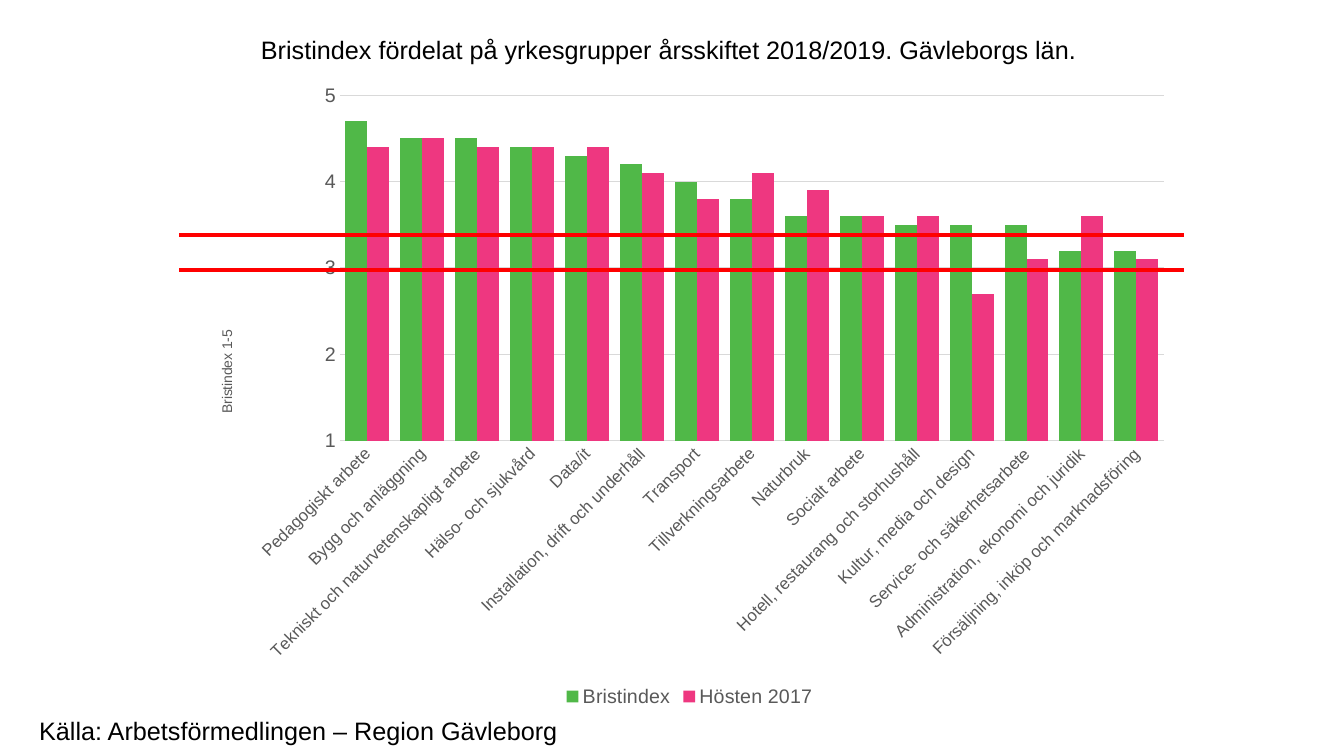
from dataclasses import dataclass
from pptx import Presentation
from pptx.chart.data import CategoryChartData
from pptx.dml.color import RGBColor
from pptx.enum.chart import XL_CHART_TYPE, XL_LEGEND_POSITION, XL_TICK_MARK
from pptx.enum.shapes import MSO_CONNECTOR
from pptx.enum.text import MSO_AUTO_SIZE
from pptx.oxml import parse_xml
from pptx.oxml.ns import nsdecls, qn
from pptx.oxml.xmlchemy import OxmlElement
from pptx.util import Pt

SCALE = 9144


@dataclass(frozen=True)
class Theme:
    face: str = "Arial"
    ink: str = "000000"
    gray: str = "595959"
    grid: str = "D9D9D9"
    mark: str = "FF0000"
    bars: tuple = ("50B848", "EE3780")
    head: int = 18
    tick: int = 14
    name: int = 12
    note: int = 10
    thin: float = 0.75
    bold: float = 3


GROUPS = [
    ("Pedagogiskt arbete", 4.7, 4.4),
    ("Bygg och anläggning", 4.5, 4.5),
    ("Tekniskt och naturvetenskapligt arbete", 4.5, 4.4),
    ("Hälso- och sjukvård", 4.4, 4.4),
    ("Data/it", 4.3, 4.4),
    ("Installation, drift och underhåll", 4.2, 4.1),
    ("Transport", 4.0, 3.8),
    ("Tillverkningsarbete", 3.8, 4.1),
    ("Naturbruk", 3.6, 3.9),
    ("Socialt arbete", 3.6, 3.6),
    ("Hotell, restaurang och storhushåll", 3.5, 3.6),
    ("Kultur, media och design", 3.5, 2.7),
    ("Service- och säkerhetsarbete", 3.5, 3.1),
    ("Administration, ekonomi och juridik", 3.2, 3.6),
    ("Försäljning, inköp och marknadsföring", 3.2, 3.1),
]


class Page:
    def __init__(self, deck, theme):
        self.theme = theme
        self.slide = deck.slides.add_slide(deck.slide_layouts[6])

    def px(self, *sizes):
        return [size * SCALE for size in sizes]

    def font(self, font, size, color):
        font.name = self.theme.face
        font.size = Pt(size)
        font.bold = False
        font.color.rgb = RGBColor.from_string(color)

    def stroke(self, line, color, width):
        line.color.rgb = RGBColor.from_string(color)
        line.width = Pt(width)

    def text(self, words, *box):
        frame = self.slide.shapes.add_textbox(*self.px(*box)).text_frame
        frame.word_wrap = False
        frame.auto_size = MSO_AUTO_SIZE.SHAPE_TO_FIT_TEXT
        run = frame.paragraphs[0].add_run()
        run.text = words
        self.font(run.font, self.theme.head, self.theme.ink)

    def line(self, left, right, top):
        ends = self.px(left, top, right, top)
        rule = self.slide.shapes.add_connector(MSO_CONNECTOR.STRAIGHT, *ends)
        self.stroke(rule.line, self.theme.mark, self.theme.bold)
        rule._element.spPr.append(OxmlElement("a:effectLst"))

    def turn(self, node, angle):
        for body in node.iter(qn("a:bodyPr")):
            body.set("rot", str(angle * 60000))
            body.set("vert", "horz")

    def place(self, node, index, **parts):
        for old in node.findall(qn("c:layout")):
            node.remove(old)
        tags = "".join(f'<c:{key} val="{val}"/>' for key, val in parts.items())
        node.insert(index, parse_xml(
            f'<c:layout {nsdecls("c")}><c:manualLayout>{tags}'
            "</c:manualLayout></c:layout>"))

    def axis(self, axis, size):
        axis.major_tick_mark = axis.minor_tick_mark = XL_TICK_MARK.NONE
        self.font(axis.tick_labels.font, size, self.theme.gray)

    def chart(self, groups, names, label, *box):
        theme = self.theme
        data = CategoryChartData()
        cats, *sets = zip(*groups)
        data.categories = cats
        for name, vals in zip(names, sets):
            data.add_series(name, vals)
        chart = self.slide.shapes.add_chart(
            XL_CHART_TYPE.COLUMN_CLUSTERED, *self.px(*box), data).chart
        self.font(chart.font, theme.note, theme.ink)
        chart.has_title = False

        plot = chart.plots[0]
        plot.gap_width = 50
        plot.overlap = 0
        plot.vary_by_categories = False
        for bars, color in zip(plot.series, theme.bars):
            bars.format.fill.solid()
            bars.format.fill.fore_color.rgb = RGBColor.from_string(color)
            bars.invert_if_negative = False

        base = chart.category_axis
        self.axis(base, theme.name)
        self.stroke(base.format.line, theme.grid, theme.thin)
        self.turn(base._element, -45)

        side = chart.value_axis
        self.axis(side, theme.tick)
        side.minimum_scale, side.maximum_scale, side.major_unit = 1, 5, 1
        side.tick_labels.number_format = "#,##0"
        side.tick_labels.number_format_is_linked = False
        side.format.line.fill.background()
        self.stroke(side.major_gridlines.format.line, theme.grid, theme.thin)
        title = side.axis_title
        run = title.text_frame.paragraphs[0].add_run()
        run.text = label
        self.font(run.font, theme.note, theme.gray)
        self.turn(title._element, -90)
        self.place(title._element, 1, xMode="edge", yMode="edge", x=0.02, y=0.4)

        chart.has_legend = True
        chart.legend.position = XL_LEGEND_POSITION.BOTTOM
        chart.legend.include_in_layout = False
        self.font(chart.legend.font, theme.tick, theme.gray)
        area = chart._chartSpace.find(qn("c:chart")).find(qn("c:plotArea"))
        self.place(area, 0, layoutTarget="inner", xMode="edge", yMode="edge",
                   x=0.146, y=0.037, w=0.834, h=0.54)


def main():
    deck = Presentation()
    deck.slide_width, deck.slide_height = 1333 * SCALE, 750 * SCALE
    page = Page(deck, Theme())
    page.chart(GROUPS, ("Bristindex", "Hösten 2017"), "Bristindex 1-5",
               194, 71, 980, 635)
    page.text("Bristindex fördelat på yrkesgrupper årsskiftet 2018/2019. "
              "Gävleborgs län.", 249, 29, 877, 42)
    for top in (268, 233):
        page.line(178, 1174, top)
    page.text("Källa: Arbetsförmedlingen – Region Gävleborg", 29, 705, 570, 42)
    deck.save("out.pptx")


if __name__ == "__main__":
    main()
